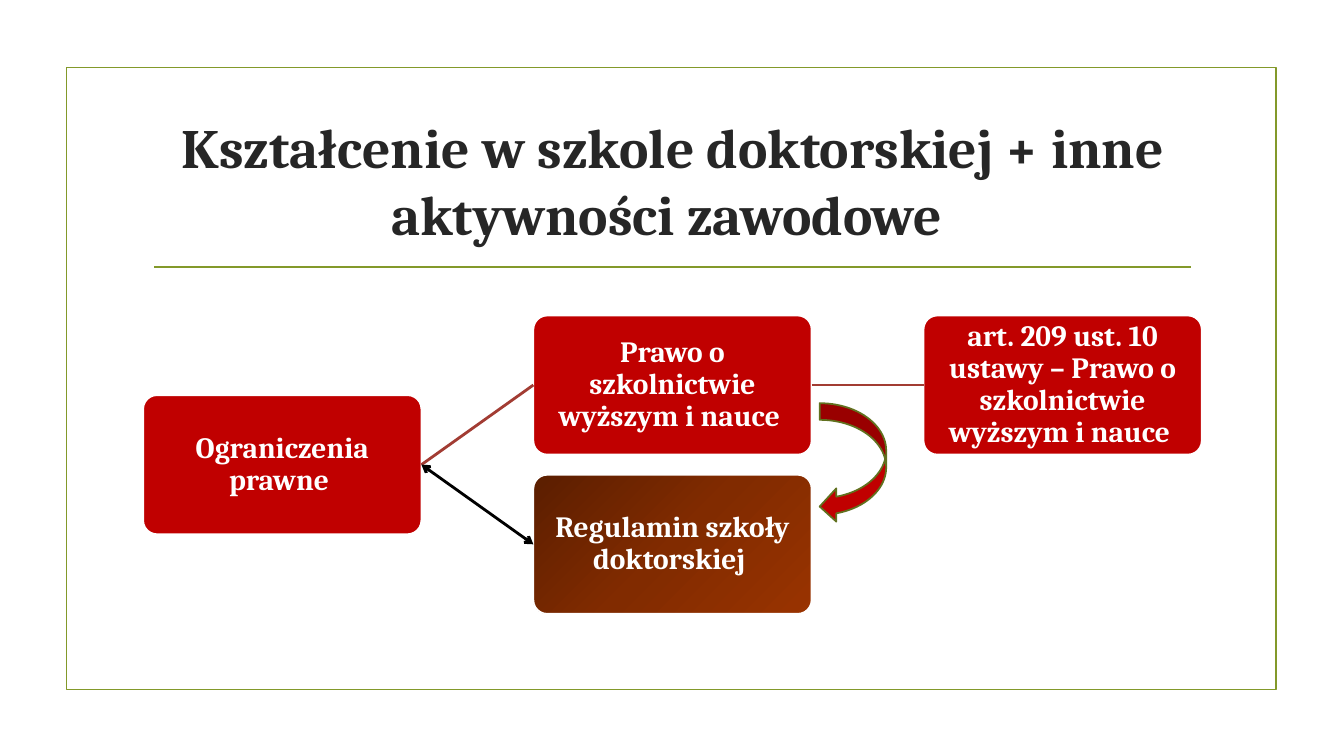
from lxml.etree import SubElement
from pptx import Presentation
from pptx.dml.color import RGBColor
from pptx.enum.shapes import MSO_CONNECTOR as Link, MSO_SHAPE as Shape
from pptx.enum.text import MSO_ANCHOR as Anchor, MSO_AUTO_SIZE as Fit, PP_ALIGN as Align
from pptx.oxml import parse_xml
from pptx.oxml.ns import nsdecls, qn
from pptx.util import Inches, Pt

WHITE = RGBColor(0xFF, 0xFF, 0xFF)
BLACK = RGBColor(0, 0, 0)
INK = RGBColor(0x26, 0x26, 0x26)
RED = RGBColor(0xC0, 0, 0)
RUST = RGBColor(0xA2, 0x3C, 0x33)
GREEN = RGBColor(0x83, 0x99, 0x2A)
OLIVE = RGBColor(0x61, 0x71, 0x1F)
BROWNS = [(0, RGBColor(0x5B, 0x1E, 0)), (50, RGBColor(0x81, 0x2B, 0)),
          (100, RGBColor(0x99, 0x33, 0))]

TITLE = "Kształcenie w szkole doktorskiej + inne aktywności zawodowe "
BOXES = {
    "limits": (0, 0.5, "Ograniczenia prawne "),
    "law": (1, 0, "Prawo o szkolnictwie wyższym i nauce "),
    "article": (2, 0, "art. 209 ust. 10 ustawy – Prawo o szkolnictwie wyższym i nauce "),
    "rules": (1, 1, "Regulamin szkoły doktorskiej "),
}
LINKS = [("limits", "law", RUST, False), ("law", "article", RUST, False),
         ("limits", "rules", BLACK, True)]

LEFT, TOP, WIDE, HIGH = 1.42, 3.13, 2.76, 1.38
COL, ROW = 3.87, 1.58
FONT = {"name": "Cambria", "bold": True}
FRAME = {"word_wrap": True, "auto_size": Fit.NONE, "vertical_anchor": Anchor.MIDDLE}
PAD = dict.fromkeys(["margin_left", "margin_right", "margin_top", "margin_bottom"],
                    Inches(0.05))


def put(item, vals):
    for key, val in vals.items():
        setattr(item, key, val)


def write(shape, text, size, color, frame, para):
    box = shape.text_frame
    box.text = text
    put(box, frame)
    line = box.paragraphs[0]
    put(line, {"alignment": Align.CENTER, **para})
    put(line.font, {**FONT, "size": Pt(size)})
    line.font.color.rgb = color


def draw(kind, at, fill, edge):
    shape = slide.shapes.add_shape(kind, *map(Inches, at))
    shape.shadow.inherit = False
    if fill is None:
        shape.fill.background()
    else:
        shape.fill.solid()
        shape.fill.fore_color.rgb = fill
    shape.line.color.rgb = edge
    shape.line.width = Pt(1.25)
    return shape


def join(ends, color, width):
    line = slide.shapes.add_connector(Link.STRAIGHT, *map(Inches, ends))
    line.line.color.rgb = color
    line.line.width = Pt(width)
    SubElement(line._element.spPr, qn("a:effectLst"))
    return line


def shade(shape, stops):
    marks = "".join(f'<a:gs pos="{pos * 1000}"><a:srgbClr val="{color}"/></a:gs>'
                    for pos, color in stops)
    grad = parse_xml(
        f'<a:gradFill {nsdecls("a")} rotWithShape="1"><a:gsLst>{marks}</a:gsLst>'
        '<a:path path="circle"><a:fillToRect r="100000" b="100000"/></a:path></a:gradFill>')
    props = shape._element.spPr
    props.replace(props.find(qn("a:solidFill")), grad)


deck = Presentation()
put(deck, {"slide_width": Inches(13.33), "slide_height": Inches(7.5)})
slide = deck.slides.add_slide(deck.slide_layouts[5])

title = slide.shapes.title
put(title, {"left": Inches(1.42), "top": Inches(1.07),
            "width": Inches(10.5), "height": Inches(1.43)})
write(title, TITLE, 39.6, INK, FRAME, {})

draw(Shape.RECTANGLE, (0.66, 0.67, 12, 6.17), None, GREEN)
join((1.53, 2.65, 11.81, 2.65), GREEN, 1.25)

cards = {}
for name, (col, row, text) in BOXES.items():
    at = LEFT + col * COL, TOP + row * ROW, WIDE, HIGH
    card = cards[name] = draw(Shape.ROUNDED_RECTANGLE, at, RED, WHITE)
    card.adjustments[0] = 0.1
    write(card, text, 21, WHITE, {**FRAME, **PAD}, {"line_spacing": 0.9})
shade(cards["rules"], BROWNS)

for start, end, color, heads in LINKS:
    line = join((0, 0, 0, 0), color, 2)
    line.begin_connect(cards[start], 3)
    line.end_connect(cards[end], 1)
    if heads:
        for tag in ("a:headEnd", "a:tailEnd"):
            SubElement(line.line._get_or_add_ln(), qn(tag), type="arrow")

draw(Shape.CURVED_LEFT_ARROW, (8.13, 4, 0.66, 1.19), RED, OLIVE)

deck.save("out.pptx")
